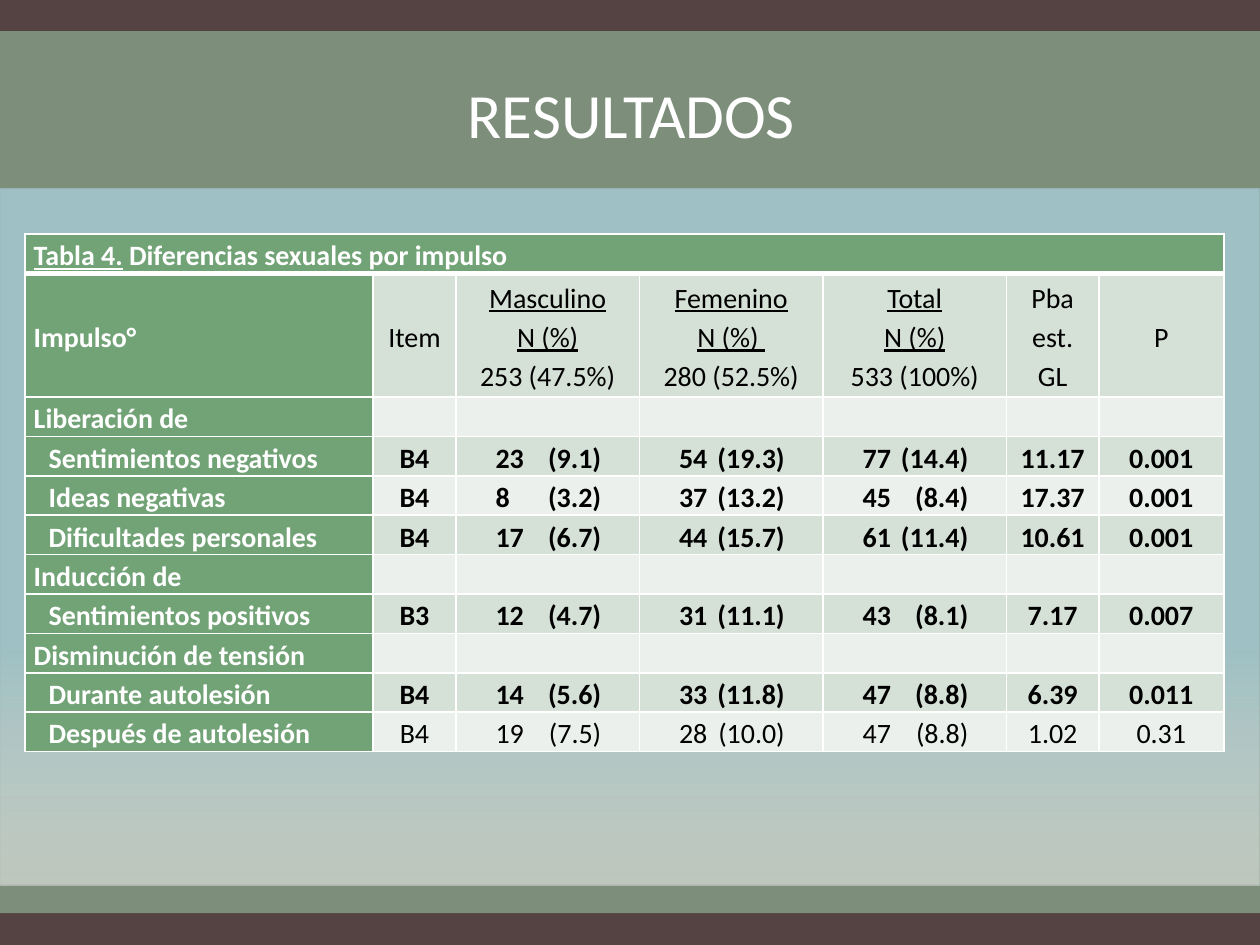
from lxml.etree import SubElement
from pptx import Presentation
from pptx.dml.color import RGBColor
from pptx.enum.shapes import MSO_SHAPE
from pptx.enum.text import MSO_ANCHOR, PP_ALIGN
from pptx.oxml.ns import qn
from pptx.util import Cm, Pt

COLORS = {
    "frame": "554343", "band": "829782", "sky": "A8CDD7", "white": "FFFFFF",
    "green": "72A376", "odd": "D5E0D6", "even": "EBF0EC", "black": "000000",
}
FONT = "Calibri"
CAPTION = ("Tabla 4.", " Diferencias sexuales por impulso")
HEADER = [
    "Impulso°", "Item", "Masculino\nN (%)\n253 (47.5%)",
    "Femenino\nN (%) \n280 (52.5%)", "Total\nN (%)\n533 (100%)",
    "Pba est. GL", "P",
]
IMPULSES = [
    ["Liberación de"],
    ["Sentimientos negativos", "B4", "23\t(9.1)", "54\t(19.3)", "77\t(14.4)", "11.17", "0.001"],
    ["Ideas negativas", "B4", "8\t(3.2)", "37\t(13.2)", "45\t(8.4)", "17.37", "0.001"],
    ["Dificultades personales", "B4", "17\t(6.7)", "44\t(15.7)", "61\t(11.4)", "10.61", "0.001"],
    ["Inducción de"],
    ["Sentimientos positivos", "B3", "12\t(4.7)", "31\t(11.1)", "43\t(8.1)", "7.17", "0.007"],
    ["Disminución de tensión"],
    ["Durante autolesión", "B4", "14\t(5.6)", "33\t(11.8)", "47\t(8.8)", "6.39", "0.011"],
    ["Después de autolesión", "B4", "19\t(7.5)", "28\t(10.0)", "47\t(8.8)", "1.02", "0.31"],
]
COLUMN_WIDTHS = [7.02, 1.67, 3.7, 3.7, 3.7, 1.86, 2.52]
ROW_HEIGHTS = [0.69, 2.49] + [0.64] * len(IMPULSES)
COUNT_INSET, PERCENT_TAB = 0.8, 2.13


def rgb(key):
    return RGBColor.from_string(COLORS[key])


def set_attributes(target, values):
    for attribute, value in values.items():
        setattr(target, attribute, value)


def set_alpha(color_element, percent):
    SubElement(color_element, qn("a:alpha"), val=str(percent * 1000))


def add_rectangle(slide, left, top, width, height):
    panel = slide.shapes.add_shape(
        MSO_SHAPE.RECTANGLE, Cm(left), Cm(top), Cm(width), Cm(height))
    panel.shadow.inherit = False
    panel.line.fill.background()
    return panel


def add_backdrop(slide, left, top, width, height):
    frame = add_rectangle(slide, left, top, width, height)
    frame.fill.solid()
    frame.fill.fore_color.rgb = rgb("frame")

    band = add_rectangle(slide, left, top + 0.63, width, height - 1.27)
    band.fill.solid()
    band.fill.fore_color.rgb = rgb("band")
    set_alpha(next(band._element.spPr.iter(qn("a:srgbClr"))), 90)

    sky = add_rectangle(slide, left, top + 3.8, width, 14.05)
    sky.fill.gradient()
    sky.fill.gradient_angle = 270
    for stop, (key, position) in zip(
            sky.fill.gradient_stops, [("sky", 0.66), ("white", 1)]):
        stop.color.rgb = rgb(key)
        stop.position = position
    for color, percent in zip(sky._element.spPr.iter(qn("a:srgbClr")), [79, 50]):
        set_alpha(color, percent)


def write_run(paragraph, text, **format_values):
    run = paragraph.add_run()
    run.text = text
    color = format_values.pop("color")
    set_attributes(run.font, {"name": FONT, "size": Pt(16), **format_values})
    run.font.color.rgb = rgb(color)


def place_title(slide, left, top, width, height):
    title = slide.shapes.title
    slide.shapes._spTree.append(title._element)
    set_attributes(title, {"left": Cm(left), "top": Cm(top),
                           "width": Cm(width), "height": Cm(height)})
    title.text_frame.vertical_anchor = MSO_ANCHOR.BOTTOM
    heading = title.text_frame.paragraphs[0]
    heading.alignment = PP_ALIGN.CENTER
    write_run(heading, "RESULTADOS", color="white", size=Pt(36))


def style_cell(cell, fill, row):
    set_attributes(cell, {
        "margin_left": Cm(0.18), "margin_right": Cm(0.18),
        "margin_top": 0, "margin_bottom": 0, "vertical_anchor": MSO_ANCHOR.MIDDLE})
    thick_side = {0: "lnB", 1: "lnT"}.get(row)
    for side in ("lnL", "lnR", "lnT", "lnB"):
        points = 3 if side == thick_side else 1
        border = SubElement(cell._tc.get_or_add_tcPr(), qn(f"a:{side}"), w=str(Pt(points)))
        border_fill = SubElement(border, qn("a:solidFill"))
        SubElement(border_fill, qn("a:srgbClr"), val=COLORS["white"])
    cell.fill.solid()
    cell.fill.fore_color.rgb = rgb(fill)


def align_percent(cell, paragraph):
    cell.margin_left = Cm(COUNT_INSET)
    tabs = SubElement(paragraph._p.get_or_add_pPr(), qn("a:tabLst"))
    SubElement(tabs, qn("a:tab"), pos=str(Cm(PERCENT_TAB)), algn="r")


def write_cell(cell, text, is_label, bold, indented):
    lines = text.split("\n")
    for number, line in enumerate(lines):
        paragraph = cell.text_frame.paragraphs[0] if number == 0 else cell.text_frame.add_paragraph()
        has_percent = "\t" in line
        if has_percent:
            align_percent(cell, paragraph)
        if indented:
            paragraph._p.get_or_add_pPr().set("marL", str(Cm(0.3)))
        paragraph.line_spacing = 1.15
        paragraph.alignment = PP_ALIGN.LEFT if is_label or has_percent else PP_ALIGN.CENTER
        write_run(paragraph, line, color="white" if is_label else "black",
                  bold=bold, underline=number < len(lines) - 1)


def add_impulse_table(slide, left, top, width, height):
    rows = [[], HEADER] + IMPULSES
    table = slide.shapes.add_table(
        len(rows), len(HEADER), Cm(left), Cm(top), Cm(width), Cm(height)).table
    for column, column_width in zip(table.columns, COLUMN_WIDTHS):
        column.width = Cm(column_width)
    for table_row, row_height in zip(table.rows, ROW_HEIGHTS):
        table_row.height = Cm(row_height)

    for row, texts in enumerate(rows):
        for column in range(len(HEADER)):
            cell = table.cell(row, column)
            is_label = row == 0 or column == 0
            style_cell(cell, "green" if is_label else "odd" if row % 2 else "even", row)
            if column < len(texts):
                write_cell(cell, texts[column], is_label,
                           bold=is_label or 1 < row < len(rows) - 1,
                           indented=is_label and row > 1 and len(texts) > 1)

    caption_cell = table.cell(0, 0)
    caption_cell.merge(table.cell(0, len(HEADER) - 1))
    caption = caption_cell.text_frame.paragraphs[0]
    caption.line_spacing = 1.15
    for text, underline in zip(CAPTION, (True, False)):
        write_run(caption, text, color="white", bold=True, underline=underline)


def main():
    deck = Presentation()
    deck.slide_width, deck.slide_height = Cm(25.4), Cm(19.05)
    slide = deck.slides.add_slide(deck.slide_layouts[5])
    add_backdrop(slide, 0, 0, 25.4, 19.05)
    place_title(slide, 1.3, 0, 22.86, 3.18)
    add_impulse_table(slide, 0.5, 4.72, sum(COLUMN_WIDTHS), sum(ROW_HEIGHTS))
    deck.save("out.pptx")


if __name__ == "__main__":
    main()
